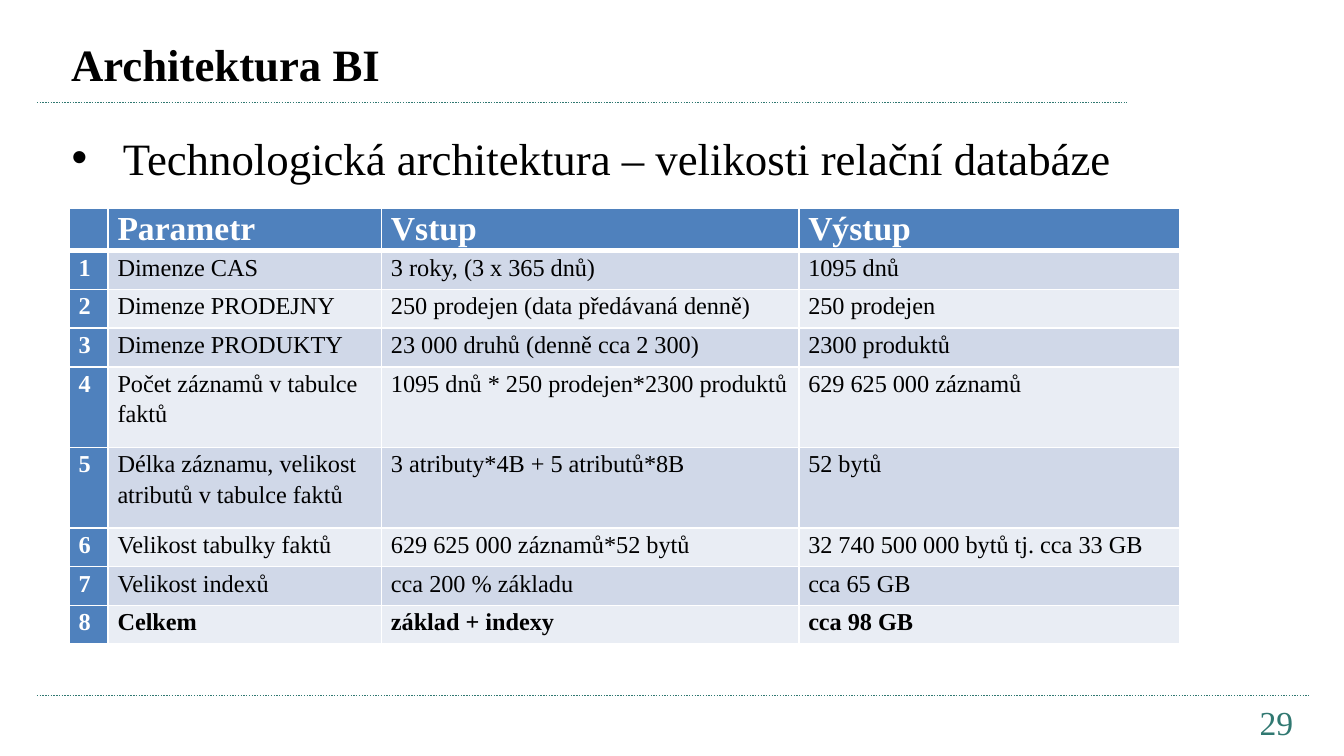
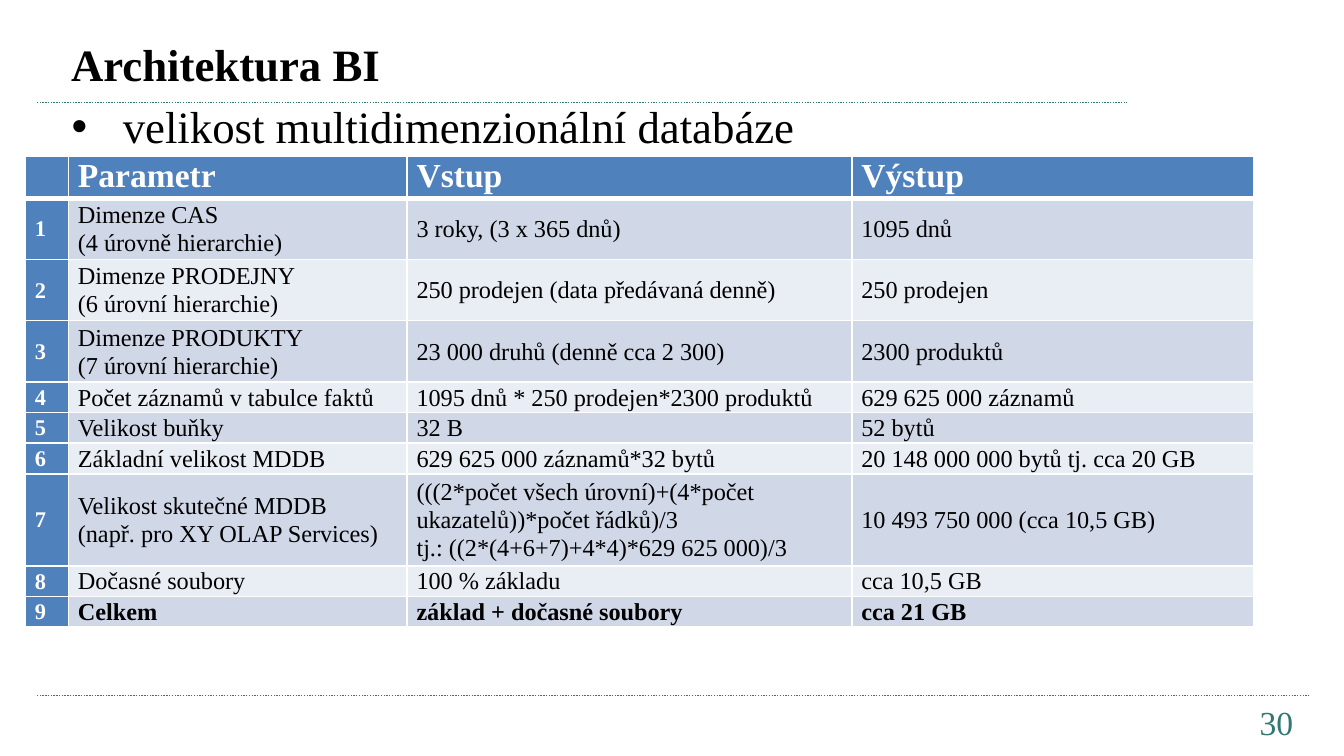
import lxml.etree
import pptx
import pptx.dml.color
import pptx.enum.dml
import pptx.enum.shapes
import pptx.enum.text
import pptx.oxml.ns
import pptx.util

GREEN = pptx.dml.color.RGBColor(0x30, 0x78, 0x71)
BLUE = pptx.dml.color.RGBColor(0x4F, 0x81, 0xBD)
PALE_BLUE = pptx.dml.color.RGBColor(0xD0, 0xD8, 0xE8)
PALE_GREY = pptx.dml.color.RGBColor(0xE9, 0xED, 0xF4)
BLACK = pptx.dml.color.RGBColor(0, 0, 0)
WHITE = pptx.dml.color.RGBColor(255, 255, 255)

FONT = "Times New Roman"
GRID_COLUMNS, GRID_ROWS = 100, 56.25
CELL = pptx.util.Inches(0.1)
ALIGN = pptx.enum.text.PP_ALIGN
ANCHOR = pptx.enum.text.MSO_ANCHOR

TITLE_BOX = (4.3, 1.9, 73.2, 5.6)
NUMBER_BOX = (85.4, 51.75, 11.8, 3)
RULES = [(2.75, 7.65, 83.85), (2.75, 51.75, 97.45)]
HEADER = ["", "Parametr", "Vstup", "Výstup"]
TIGHT, LOOSE = 1.05, 1.15

RELATIONAL_ROWS = [
    ("Dimenze CAS", "3 roky, (3 x 365 dnů)", "1095 dnů"),
    ("Dimenze PRODEJNY", "250 prodejen (data předávaná denně)", "250 prodejen"),
    ("Dimenze PRODUKTY", "23 000 druhů (denně cca 2 300)", "2300 produktů"),
    ("Počet záznamů v tabulce faktů", "1095 dnů * 250 prodejen*2300 produktů",
     "629 625 000 záznamů"),
    ("Délka záznamu, velikost atributů v tabulce faktů",
     "3 atributy*4B + 5 atributů*8B", "52 bytů"),
    ("Velikost tabulky faktů", "629 625 000 záznamů*52 bytů",
     "32 740 500 000 bytů tj. cca 33 GB"),
    ("Velikost indexů", "cca 200 % základu", "cca 65 GB"),
    ("Celkem", "základ + indexy", "cca 98 GB"),
]

MULTIDIMENSIONAL_ROWS = [
    ("Dimenze CAS\n(4 úrovně hierarchie)", "3 roky, (3 x 365 dnů)", "1095 dnů"),
    ("Dimenze PRODEJNY\n(6 úrovní hierarchie)",
     "250 prodejen (data předávaná denně)", "250 prodejen"),
    ("Dimenze PRODUKTY\n(7 úrovní hierarchie)",
     "23 000 druhů (denně cca 2 300)", "2300 produktů"),
    ("Počet záznamů v tabulce faktů", "1095 dnů * 250 prodejen*2300 produktů",
     "629 625 000 záznamů"),
    ("Velikost buňky", "32 B", "52 bytů"),
    ("Základní velikost MDDB", "629 625 000 záznamů*32 bytů",
     "20 148 000 000 bytů tj. cca 20 GB"),
    ("Velikost skutečné MDDB\n(např. pro XY OLAP Services)",
     "(((2*počet všech úrovní)+(4*počet ukazatelů))*počet řádků)/3\n"
     "tj.: ((2*(4+6+7)+4*4)*629 625 000)/3",
     "10 493 750 000 (cca 10,5 GB)"),
    ("Dočasné soubory", "100 % základu", "cca 10,5 GB"),
    ("Celkem", "základ + dočasné soubory", "cca 21 GB"),
]


def grid(*counts):
    return [round(count * CELL) for count in counts]


def add_span(para, text, size, color, bold=False):
    span = para.add_run()
    span.text = text
    span.font.name = FONT
    span.font.size = pptx.util.Pt(size)
    span.font.bold = bold
    span.font.color.rgb = color


def add_text(page, box, text, size, color, bold=False,
             align=ALIGN.LEFT, anchor=ANCHOR.MIDDLE):
    frame = page.shapes.add_textbox(*grid(*box)).text_frame
    frame.word_wrap = True
    frame.vertical_anchor = anchor
    para = frame.paragraphs[0]
    para.alignment = align
    add_span(para, text, size, color, bold)
    return para


def add_rule(page, left, top, right):
    rule = page.shapes.add_connector(
        pptx.enum.shapes.MSO_CONNECTOR.STRAIGHT, *grid(left, top, right, top))
    rule.line.color.rgb = GREEN
    rule.line.width = pptx.util.Pt(0.75)
    rule.line.dash_style = pptx.enum.dml.MSO_LINE.ROUND_DOT
    properties = rule._element.spPr
    lxml.etree.SubElement(properties, pptx.oxml.ns.qn("a:effectLst"))


def add_bullet(page, box, text):
    para = add_text(page, box, text, 24, BLACK, align=ALIGN.JUSTIFY)
    properties = para._p.get_or_add_pPr()
    indent = pptx.util.Inches(0.38)
    properties.set("marL", str(indent))
    properties.set("indent", str(-indent))
    for tag, name, value in [("a:buFont", "typeface", "Arial"),
                             ("a:buChar", "char", "•")]:
        lxml.etree.SubElement(properties, pptx.oxml.ns.qn(tag)).set(name, value)


def add_borders(cell, top, bottom):
    properties = cell._tc.get_or_add_tcPr()
    for side, width in [("L", 1), ("R", 1), ("T", top), ("B", bottom)]:
        line = lxml.etree.SubElement(properties, pptx.oxml.ns.qn("a:ln" + side))
        line.set("w", str(pptx.util.Pt(width)))
        fill = lxml.etree.SubElement(line, pptx.oxml.ns.qn("a:solidFill"))
        color = lxml.etree.SubElement(fill, pptx.oxml.ns.qn("a:srgbClr"))
        color.set("val", str(WHITE))


def fill_cell(cell, text, size, color, bold, background, anchor, spacing):
    cell.margin_left = cell.margin_right = pptx.util.Inches(0.07)
    cell.margin_top = cell.margin_bottom = 0
    cell.vertical_anchor = anchor
    cell.fill.solid()
    cell.fill.fore_color.rgb = background
    for index, line in enumerate(text.split("\n")):
        frame = cell.text_frame
        para = frame.add_paragraph() if index else frame.paragraphs[0]
        para.line_spacing = spacing
        if line:
            add_span(para, line, size, color, bold)
        else:
            ending = pptx.oxml.ns.qn("a:endParaRPr")
            lxml.etree.SubElement(para._p, ending).set("sz", "1200")


def add_size_table(page, corner, widths, heights, body,
                   number_size, anchor, spacing):
    rows = [HEADER] + [(str(number), *texts)
                       for number, texts in enumerate(body, 1)]
    table = page.shapes.add_table(
        len(rows), len(widths),
        *grid(*corner, sum(widths), sum(heights))).table
    for column, width in zip(table.columns, grid(*widths)):
        column.width = width
    for row, height in zip(table.rows, grid(*heights)):
        row.height = height
    for r, texts in enumerate(rows):
        for c, text in enumerate(texts):
            cell = table.cell(r, c)
            add_borders(cell, 3 if r == 1 else 1, 3 if r == 0 else 1)
            if r == 0:
                fill_cell(cell, text, 18, WHITE, True, BLUE, ANCHOR.TOP, TIGHT)
            elif c == 0:
                fill_cell(cell, text, number_size, WHITE, True, BLUE,
                          anchor, spacing)
            else:
                band = PALE_BLUE if r % 2 else PALE_GREY
                fill_cell(cell, text, 13, BLACK, r == len(body), band,
                          anchor, spacing)


def add_page(deck, number, bullet_top, bullet):
    page = deck.slides.add_slide(deck.slide_layouts[6])
    for rule in RULES:
        add_rule(page, *rule)
    add_text(page, TITLE_BOX, "Architektura BI", 24, BLACK, bold=True)
    add_bullet(page, (4.35, bullet_top, 88.2, 5.5), bullet)
    add_text(page, NUMBER_BOX, str(number), 18, GREEN,
             align=ALIGN.RIGHT, anchor=ANCHOR.TOP)
    return page


def main():
    deck = pptx.Presentation()
    deck.slide_width, deck.slide_height = grid(GRID_COLUMNS, GRID_ROWS)

    page = add_page(deck, 29, 8.95,
                    "Technologická architektura – velikosti relační databáze")
    add_size_table(page, (5.15, 15.5), [2.9, 20.35, 31.05, 28.35],
                   [3.15] + [2.88] * 3 + [6] * 2 + [2.88] * 3,
                   RELATIONAL_ROWS, 13, ANCHOR.TOP, LOOSE)

    page = add_page(deck, 30, 6.6, "velikost multidimenzionální databáze")
    add_size_table(page, (1.9, 11.6), [3.2, 25.2, 33.1, 29.9],
                   [3.15] + [4.55] * 3 + [2.28] * 3 + [6.85] + [2.28] * 2,
                   MULTIDIMENSIONAL_ROWS, 12, ANCHOR.MIDDLE, TIGHT)

    deck.save("out.pptx")


if __name__ == "__main__":
    main()
